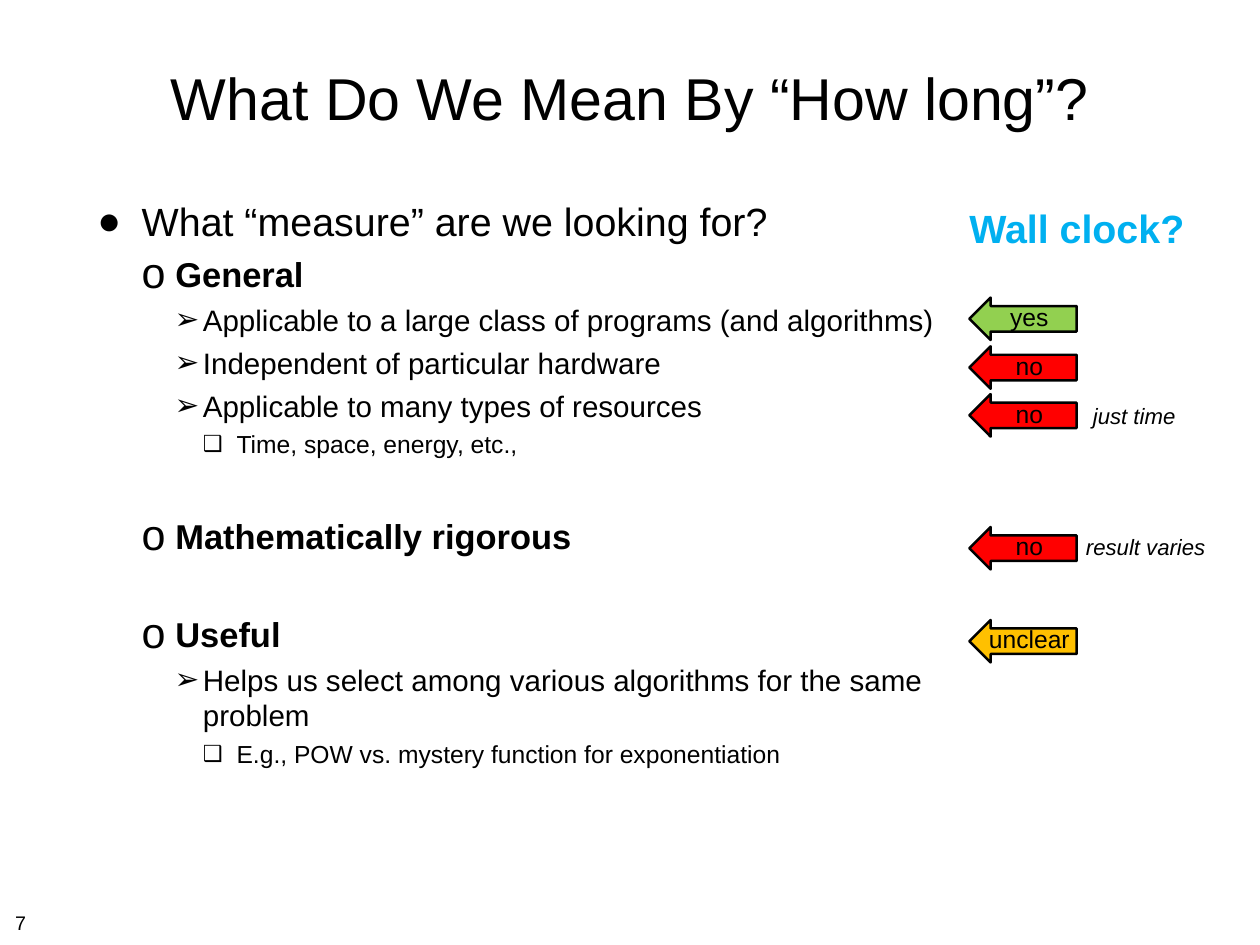
from lxml.etree import SubElement
from pptx import Presentation
from pptx.dml.color import RGBColor
from pptx.enum.shapes import MSO_SHAPE as SHAPE
from pptx.enum.text import MSO_ANCHOR as ANCHOR, PP_ALIGN as ALIGN
from pptx.oxml.ns import qn
from pptx.util import Emu, Pt

BLACK, GREEN, RED, AMBER, BLUE = "000000", "92D050", "FF0000", "FFC000", "00B0F0"
LEVELS = [
    dict(size=32, bullet="●", left=50, hang=50, before=8),
    dict(size=28, bullet="o", left=88, hang=38, before=7, scale=125, bold=True),
    dict(size=24, bullet="➢", left=119, hang=32, before=6),
    dict(size=20, bullet="❑", left=157, hang=38, before=4.8, scale=90),
]
SECTION_GAP = 46
OUTLINE = [
    (0, "What “measure” are we looking for?", {}),
    (1, "General", {}),
    (2, "Applicable to a large class of programs (and algorithms)", {}),
    (2, "Independent of particular hardware", {}),
    (2, "Applicable to many types of resources", {}),
    (3, "Time, space, energy, etc.,", {}),
    (1, "Mathematically rigorous", {"before": SECTION_GAP}),
    (1, "Useful", {"before": SECTION_GAP}),
    (2, "Helps us select among various algorithms for the same problem", {}),
    (3, "E.g., POW vs. mystery function for exponentiation", {}),
]
VERDICTS = [
    (336, "yes", GREEN),
    (391, "no", RED),
    (445, "no", RED),
    (595, "no", RED),
    (700, "unclear", AMBER),
]


def px(n):
    return Emu(n * 9144)


def rgb(color):
    return RGBColor.from_string(color)


def write(p, text, size=20, color=BLACK, bold=False, italic=False,
          align=ALIGN.LEFT, before=0, level=0, bullet=None, left=0, hang=0,
          scale=100):
    p.alignment = align
    p.level = level
    p.space_before = Pt(before)
    r = p.add_run()
    r.text = text
    f = r.font
    f.name, f.size, f.bold, f.italic = "Arial", Pt(size), bold, italic
    f.color.rgb = rgb(color)
    if bullet:
        pPr = p._p.get_or_add_pPr()
        pPr.set("marL", str(px(left)))
        pPr.set("indent", str(px(-hang)))
        SubElement(pPr, qn("a:buSzPct"), val=str(scale * 1000))
        SubElement(pPr, qn("a:buFont"), typeface="Arial")
        SubElement(pPr, qn("a:buChar"), char=bullet)


class Deck:
    def __init__(self, width, height):
        self.prs = Presentation()
        self.prs.slide_width, self.prs.slide_height = px(width), px(height)
        self.s = self.prs.slides.add_slide(self.prs.slide_layouts[6])

    def frame(self, sp, insets, anchor, wrap):
        tf = sp.text_frame
        tf.margin_left, tf.margin_top, tf.margin_right, tf.margin_bottom = map(px, insets)
        tf.vertical_anchor = anchor
        tf.word_wrap = wrap
        return tf

    def box(self, x, y, w, h, anchor=ANCHOR.TOP, wrap=True):
        sp = self.s.shapes.add_textbox(px(x), px(y), px(w), px(h))
        return self.frame(sp, (6, 6, 6, 6), anchor, wrap)

    def label(self, x, y, w, h, text, anchor=ANCHOR.TOP, wrap=True, **fmt):
        write(self.box(x, y, w, h, anchor, wrap).paragraphs[0], text, **fmt)

    def outline(self, x, y, w, h, items):
        tf = self.box(x, y, w, h)
        for i, (level, text, extra) in enumerate(items):
            p = tf.add_paragraph() if i else tf.paragraphs[0]
            write(p, text, level=level, **{**LEVELS[level], **extra})

    def arrow(self, x, y, w, h, text, fill):
        sp = self.s.shapes.add_shape(SHAPE.LEFT_ARROW, px(x), px(y), px(w), px(h))
        sp.shadow.inherit = False
        sp.adjustments[0], sp.adjustments[1] = 0.6, 0.5
        sp.fill.solid()
        sp.fill.fore_color.rgb = rgb(fill)
        sp.line.color.rgb = rgb(BLACK)
        sp.line.width = Pt(2)
        tf = self.frame(sp, (0, 0, 0, 5), ANCHOR.MIDDLE, False)
        write(tf.paragraphs[0], text, align=ALIGN.CENTER)


def main():
    deck = Deck(1422, 1067)
    deck.label(104, 28, 1214, 164, "What Do We Mean By “How long”?",
               anchor=ANCHOR.MIDDLE, size=48, align=ALIGN.CENTER)
    deck.outline(104, 217, 974, 754, OUTLINE)
    deck.label(1078, 225, 275, 662, "Wall clock?", size=32, color=BLUE,
               bold=True, align=ALIGN.CENTER, before=8)
    for y, text, fill in VERDICTS:
        deck.arrow(1094, y, 121, 48, text, fill)
    for x, y, w, text in [(1223, 449, 114, "just time"),
                          (1215, 597, 156, "result varies")]:
        deck.label(x, y, w, 40, text, anchor=ANCHOR.MIDDLE, wrap=False,
                   size=18, italic=True, align=ALIGN.CENTER)
    deck.label(11, 1023, 37, 35, "7", wrap=False, size=16)
    deck.prs.save("out.pptx")


if __name__ == "__main__":
    main()
